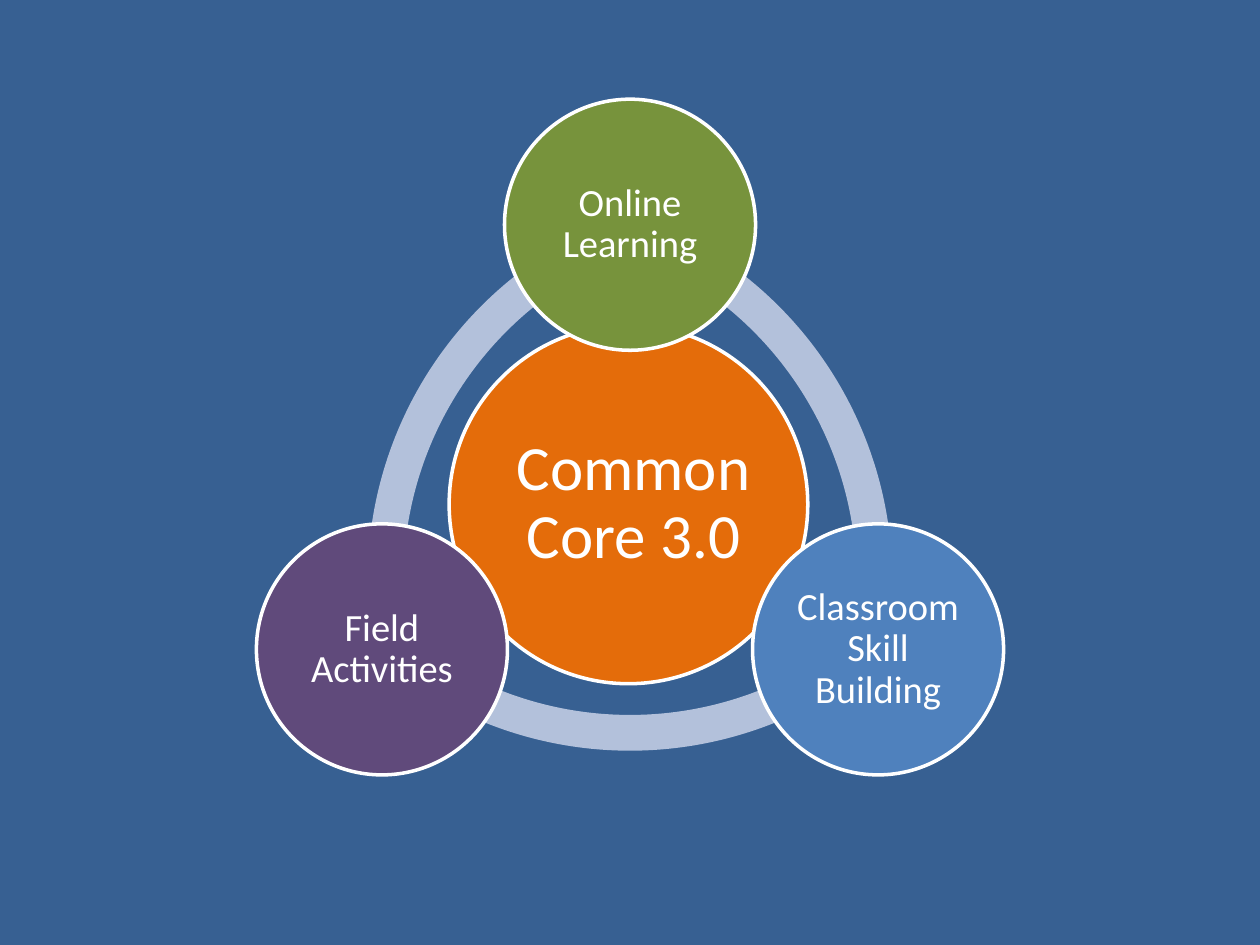
import math
from pptx import Presentation
from pptx import util as u
from pptx.dml.color import RGBColor
from pptx.enum import shapes, text

BACKGROUND = RGBColor(0x37, 0x60, 0x92)
RING = RGBColor(0xB3, 0xC1, 0xDB)
ORANGE = RGBColor(0xE4, 0x6C, 0x0A)
GREEN = RGBColor(0x77, 0x93, 0x3C)
BLUE = RGBColor(0x4F, 0x81, 0xBD)
PURPLE = RGBColor(0x60, 0x4A, 0x7B)
WHITE = RGBColor(0xFF, 0xFF, 0xFF)

COMPONENTS = [
    ("Online Learning", GREEN, 270),
    ("Classroom Skill Building", BLUE, 30),
    ("Field Activities", PURPLE, 150),
]
ARC_HALF_SPAN = 40.5
ARC_THICKNESS = 0.046
DEGREE = 0.6


def write(shape, words, size, inset, shift=0, font="Calibri", color=WHITE):
    frame = shape.text_frame
    frame.word_wrap = True
    frame.vertical_anchor = text.MSO_ANCHOR.MIDDLE
    frame.margin_right = frame.margin_top = frame.margin_bottom = u.Inches(inset)
    frame.margin_left = u.Inches(inset + shift)
    paragraph = frame.paragraphs[0]
    paragraph.alignment = text.PP_ALIGN.CENTER
    paragraph.line_spacing = 0.9
    run = paragraph.add_run()
    run.text = words
    run.font.name = font
    run.font.size = u.Pt(size)
    run.font.color.rgb = color


def add_round(slide, kind, center, diameter, fill, outline=None):
    left, top = (int(c - diameter / 2) for c in center)
    shape = slide.shapes.add_shape(kind, left, top, int(diameter), int(diameter))
    shape.shadow.inherit = False
    shape.fill.solid()
    shape.fill.fore_color.rgb = fill
    if outline is None:
        shape.line.fill.background()
    else:
        shape.line.color.rgb = outline
        shape.line.width = u.Pt(2)
    return shape


def around(center, reach_x, reach_y, angle):
    turn = math.radians(angle)
    return center[0] + reach_x * math.cos(turn), center[1] + reach_y * math.sin(turn)


def add_arc(slide, center, width, angle):
    arc_center = around(center, 0.195 * width, 0.195 * width, angle)
    arc = add_round(slide, shapes.MSO_SHAPE.BLOCK_ARC, arc_center, 1.04 * width, RING)
    middle = angle + 180
    arc.adjustments[0] = (middle - ARC_HALF_SPAN) % 360 * DEGREE
    arc.adjustments[1] = (middle + ARC_HALF_SPAN) % 360 * DEGREE
    arc.adjustments[2] = ARC_THICKNESS


def add_radial_cycle(slide, left, top, width, height):
    node = 0.336 * width
    reach_x = (width - node) / 2 / math.cos(math.radians(30))
    reach_y = (height - node) / 1.5
    center = left + width / 2, top + node / 2 + reach_y

    for _, _, angle in COMPONENTS:
        add_arc(slide, center, width, angle)

    core_center = center[0] - 0.002 * width, center[1] - 0.005 * height
    core = add_round(slide, shapes.MSO_SHAPE.OVAL, core_center, 0.48 * width, ORANGE, WHITE)
    write(core, "Common Core 3.0", size=36, inset=0, shift=0.08)

    for words, fill, angle in COMPONENTS:
        node_center = around(center, reach_x, reach_y, angle)
        circle = add_round(slide, shapes.MSO_SHAPE.OVAL, node_center, node, fill, WHITE)
        write(circle, words, size=22, inset=0.03)


def main():
    deck = Presentation()
    deck.slide_width, deck.slide_height = u.Inches(10), u.Inches(7.5)
    slide = deck.slides.add_slide(deck.slide_layouts[6])
    slide.background.fill.solid()
    slide.background.fill.fore_color.rgb = BACKGROUND
    wide, high = deck.slide_width, deck.slide_height
    add_radial_cycle(slide, 0.2035 * wide, 0.105 * high, 0.593 * wide, 0.715 * high)
    deck.save("out.pptx")


if __name__ == "__main__":
    main()
